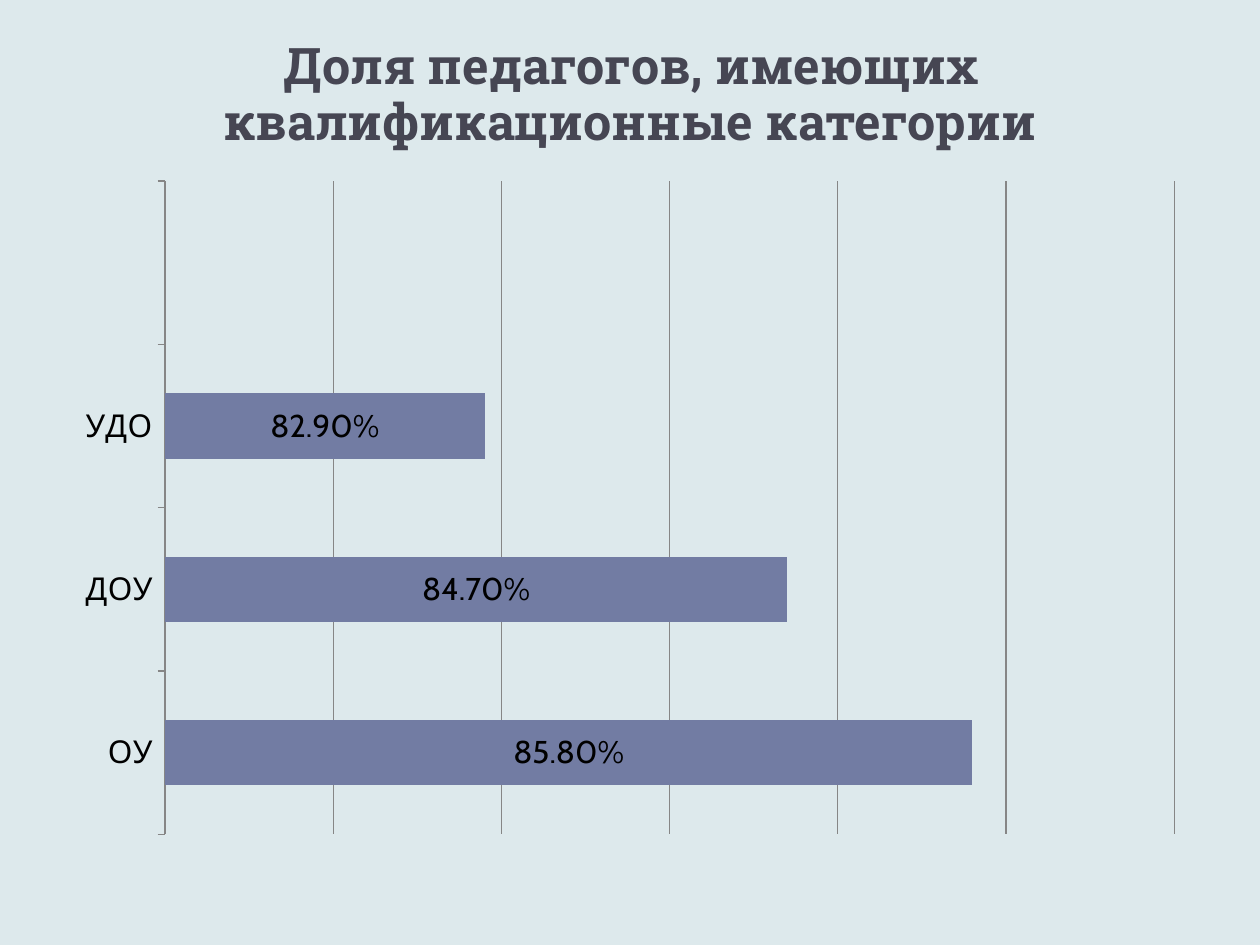
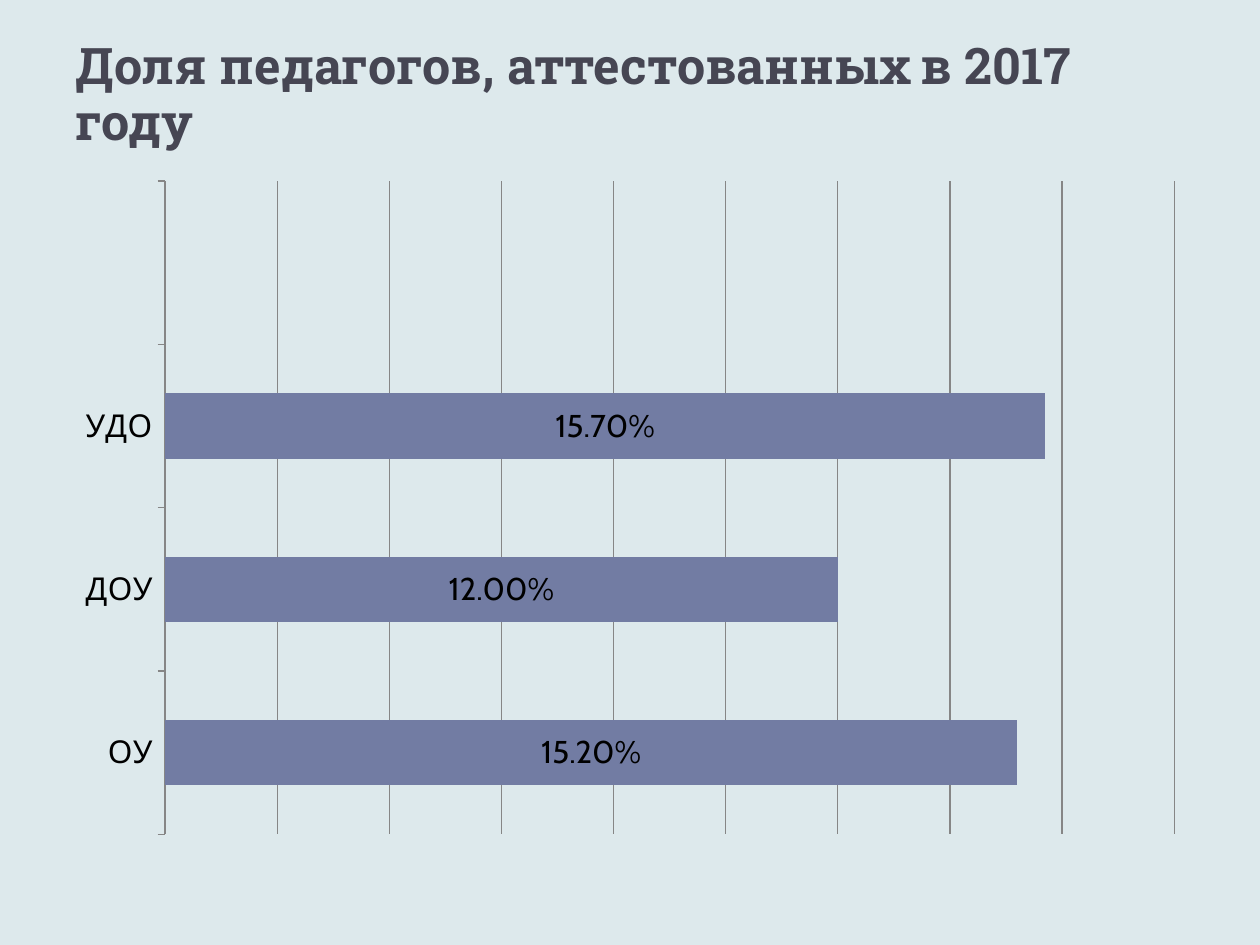
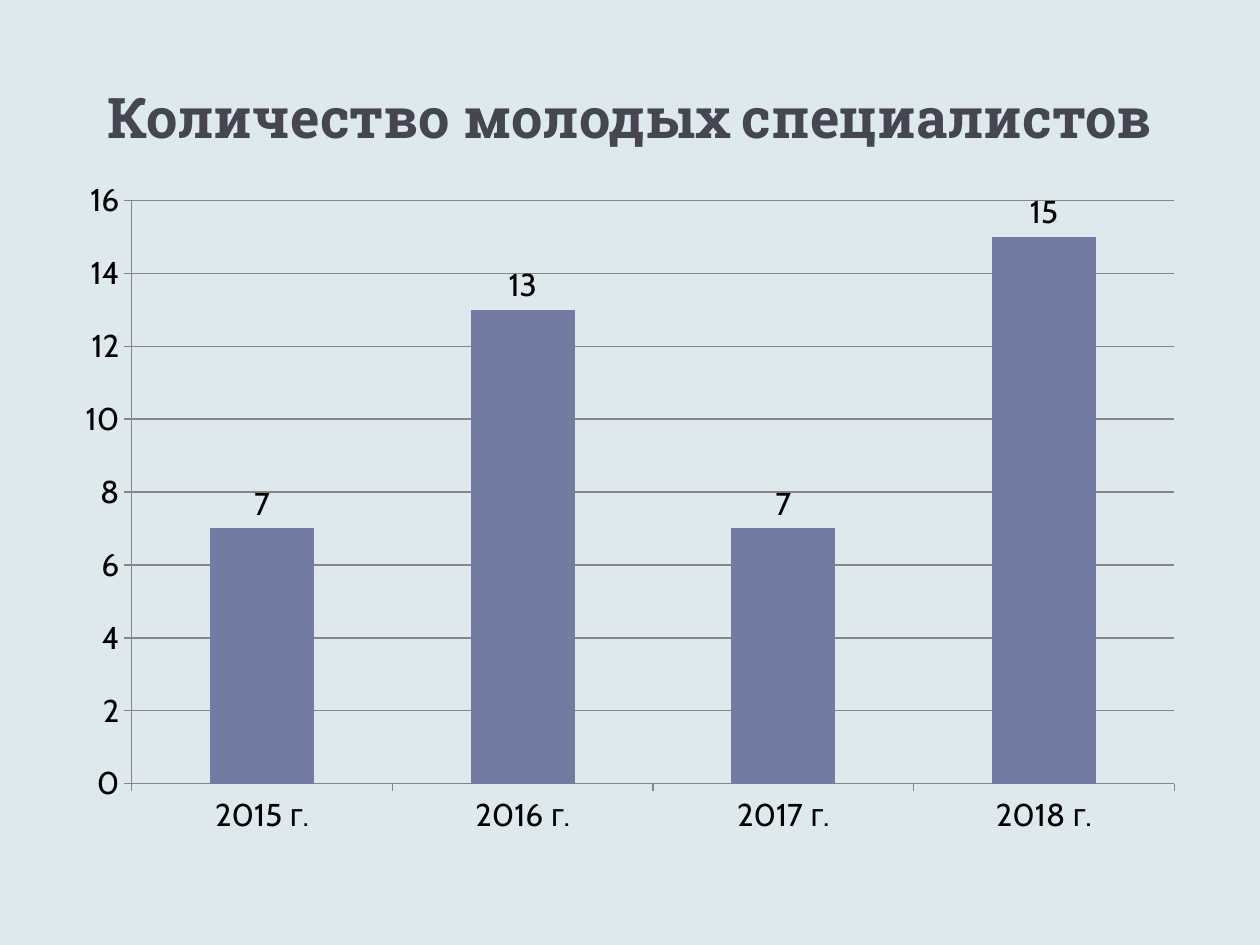
"""Build three slides of bar charts about teaching staff."""
from dataclasses import dataclass

from pptx import Presentation
from pptx.chart.chart import Chart
from pptx.chart.data import CategoryChartData
from pptx.dml.color import RGBColor
from pptx.enum.chart import XL_CHART_TYPE, XL_LABEL_POSITION, XL_TICK_MARK
from pptx.enum.text import MSO_ANCHOR, PP_ALIGN
from pptx.slide import Slide
from pptx.util import Inches, Pt

STACKED = XL_CHART_TYPE.BAR_STACKED
COLUMN = XL_CHART_TYPE.COLUMN_CLUSTERED
INSIDE = XL_LABEL_POSITION.CENTER
ABOVE = XL_LABEL_POSITION.OUTSIDE_END
TICK_OUT, TICK_NONE = XL_TICK_MARK.OUTSIDE, XL_TICK_MARK.NONE
BOTTOM = MSO_ANCHOR.BOTTOM
LEFT, CENTER = PP_ALIGN.LEFT, PP_ALIGN.CENTER

PAPER, INK, BLACK, BAR, GRID = "DDE9EC", "464653", "000000", "727CA3", "868686"
HEAD_FONT, BODY_FONT = "Roboto Slab", "Cabin"
SIDE, WIDTH = Inches(0.5), Inches(9)
UNITS = ("ОУ", "ДОУ", "УДО", "")
YEARS = tuple(f"{year} г." for year in range(2015, 2019))


@dataclass(frozen=True)
class Page:
    """One slide: its title and its chart."""
    title: str
    names: tuple[str, ...]
    values: tuple[float | None, ...]
    low: float
    high: float
    step: float
    kind: int = STACKED
    size: float = 28.8
    align: int = CENTER


PAGES = (
    Page("Доля педагогов, имеющих квалификационные категории", UNITS,
         (0.858, 0.847, 0.829, None), 0.81, 0.87, 0.01),
    Page("Доля педагогов, аттестованных в 2017 году", UNITS,
         (0.152, 0.12, 0.157, None), 0, 0.18, 0.02, align=LEFT),
    Page("Количество молодых специалистов", YEARS,
         (7, 13, 7, 15), 0, 16, 2, kind=COLUMN, size=32),
)


def color(code: str) -> RGBColor:
    """Turn a hex string into a colour."""
    return RGBColor.from_string(code)


def add_title(slide: Slide, page: Page) -> None:
    """Write the slide title."""
    frame = slide.shapes.add_textbox(SIDE, Inches(0.17), WIDTH, Inches(1.08)).text_frame
    frame.word_wrap = True
    frame.vertical_anchor = BOTTOM
    para = frame.paragraphs[0]
    para.text = page.title
    para.alignment = page.align
    para.line_spacing = 0.92
    font = para.font
    font.name, font.size, font.bold = HEAD_FONT, Pt(page.size), True
    font.color.rgb = color(INK)


def style_axes(chart: Chart, page: Page) -> None:
    """Set the scale, the ticks and the grid lines."""
    value, group = chart.value_axis, chart.category_axis
    value.minimum_scale, value.maximum_scale = page.low, page.high
    value.major_unit = page.step
    value.has_major_gridlines = True
    value.visible = page.kind == COLUMN
    for line in (value.format.line, group.format.line, value.major_gridlines.format.line):
        line.color.rgb = color(GRID)
        line.width = Pt(0.75)
    for axis in (value, group):
        axis.major_tick_mark, axis.minor_tick_mark = TICK_OUT, TICK_NONE


def add_bars(slide: Slide, page: Page) -> None:
    """Draw the chart with its labels."""
    form = "0.00%" if page.kind == STACKED else "General"
    data = CategoryChartData(number_format=form)
    data.categories = page.names
    data.add_series("Series 1", page.values)
    chart = slide.shapes.add_chart(
        page.kind, SIDE, Inches(1.33), WIDTH, Inches(5.4), data).chart
    chart.has_legend = chart.has_title = False
    chart.font.name, chart.font.size = BODY_FONT, Pt(18)
    chart.font.color.rgb = color(BLACK)
    style_axes(chart, page)
    plot = chart.plots[0]
    plot.gap_width, plot.vary_by_categories = 150, False
    plot.overlap = 100 if page.kind == STACKED else 0
    fill = plot.series[0].format.fill
    fill.solid()
    fill.fore_color.rgb = color(BAR)
    plot.has_data_labels = True
    labels = plot.data_labels
    labels.show_value = True
    labels.number_format, labels.number_format_is_linked = form, False
    labels.position = INSIDE if page.kind == STACKED else ABOVE


def main() -> None:
    """Build and save the slides."""
    deck = Presentation()
    deck.slide_width, deck.slide_height = Inches(10), Inches(7.5)
    for page in PAGES:
        slide = deck.slides.add_slide(deck.slide_layouts[6])
        back = slide.background.fill
        back.solid()
        back.fore_color.rgb = color(PAPER)
        add_title(slide, page)
        add_bars(slide, page)
    deck.save("out.pptx")


if __name__ == "__main__":
    main()
